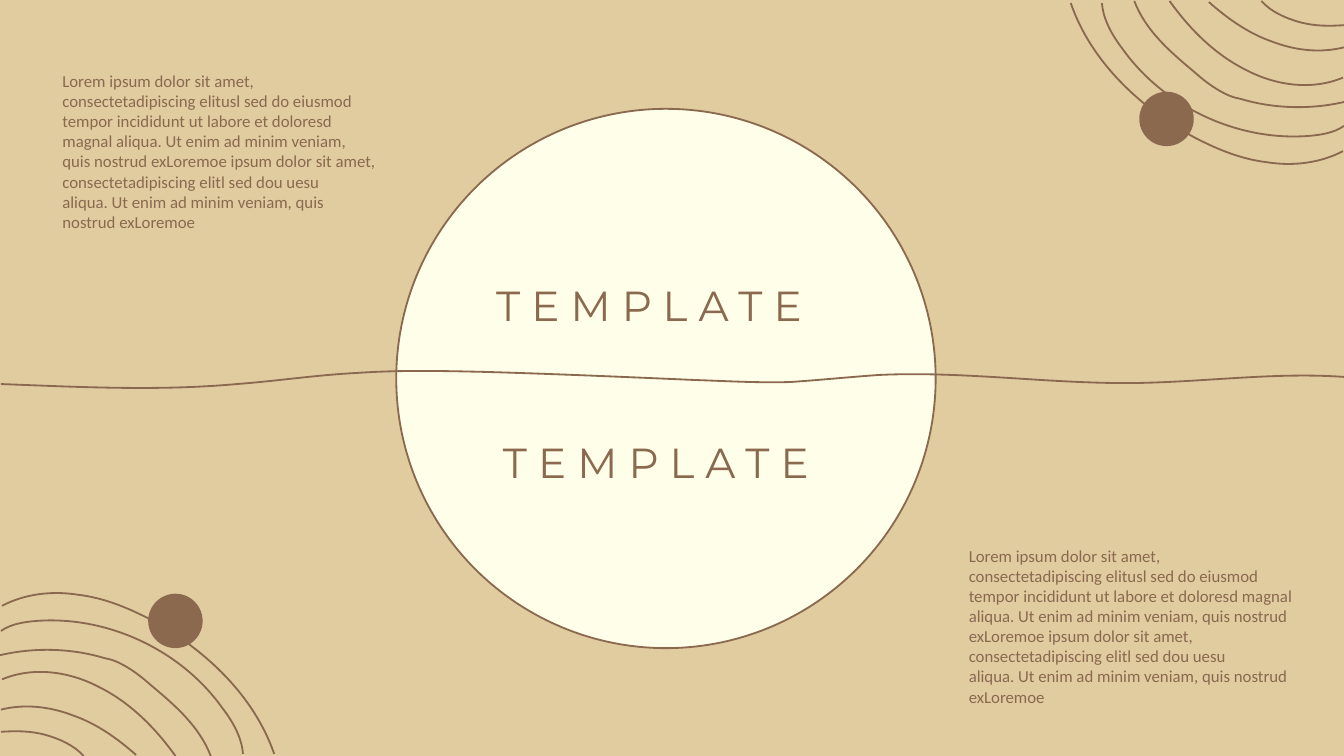
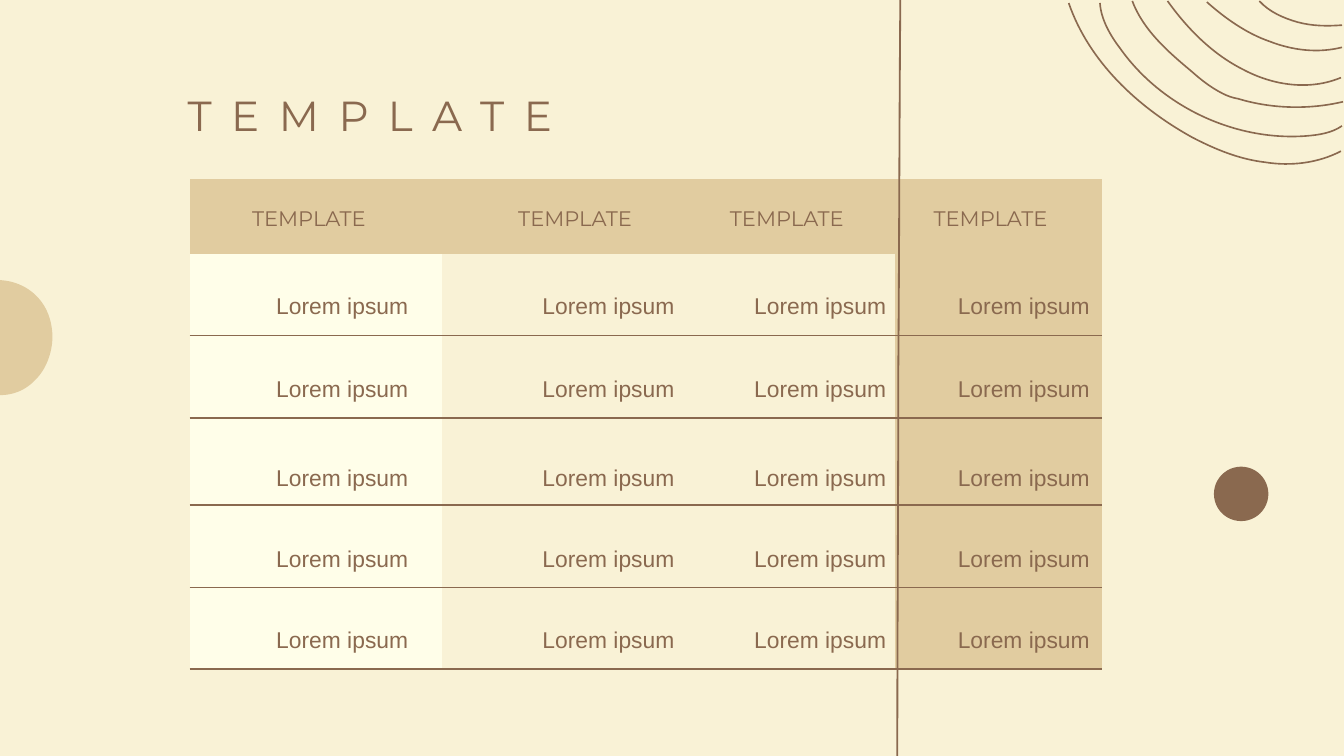
from lxml import etree
from pptx import Presentation
from pptx import util as u
from pptx.dml.color import RGBColor
from pptx.enum import shapes, text
from pptx.oxml import ns

# Shared look
BROWN = RGBColor(0x8A, 0x69, 0x4F)
TAN = RGBColor(0xE1, 0xCC, 0xA0)
CREAM = RGBColor(0xF9, 0xF2, 0xD6)
IVORY = RGBColor(0xFF, 0xFE, 0xE9)
TITLE_FONT, BODY_FONT, TABLE_FONT = "Montserrat", "Calibri", "Arial"
WIDTH, HEIGHT = 13.33, 7.5
LINE = 1.3
DOT = 0.54
NO_STYLE = "{2D5ABB26-0587-4C30-8999-92F81FD0307C}"

# Top-right corner arcs: a start point, then Bezier triples
ARCS = [
    [(10.62, 0.03), (10.82, 0.61), (11.3, 1.06), (11.84, 1.36),
     (12.07, 1.48), (12.31, 1.58), (12.57, 1.61),
     (12.82, 1.65), (13.09, 1.62), (13.32, 1.5)],
    [(10.93, 0.03), (10.94, 0.19), (11.03, 0.35), (11.13, 0.48),
     (11.54, 1.06), (12.27, 1.4), (12.97, 1.35),
     (13.1, 1.34), (13.23, 1.32), (13.33, 1.25)],
    [(11.25, 0.01), (11.36, 0.3), (11.6, 0.51), (11.84, 0.71),
     (11.93, 0.79), (12.03, 0.87), (12.15, 0.93),
     (12.19, 0.95), (12.24, 0.97), (12.3, 0.98),
     (12.63, 1.08), (13, 1.09), (13.34, 1.01)],
    [(11.6, 0.01), (11.8, 0.29), (12.05, 0.54), (12.35, 0.69),
     (12.65, 0.85), (13.01, 0.9), (13.32, 0.77)],
    [(11.99, 0.02), (12.17, 0.18), (12.38, 0.33), (12.61, 0.41),
     (12.84, 0.5), (13.09, 0.53), (13.33, 0.47)],
    [(12.51, 0.01), (12.61, 0.12), (12.75, 0.18), (12.89, 0.22),
     (13.04, 0.26), (13.18, 0.26), (13.33, 0.25)],
]
WAVE = [
    (0.01, 3.81), (0.79, 3.84), (1.58, 3.88), (2.35, 3.81),
    (2.75, 3.78), (3.14, 3.72), (3.54, 3.7),
    (3.96, 3.67), (4.4, 3.68), (4.82, 3.69),
    (5.51, 3.71), (6.2, 3.74), (6.89, 3.77),
    (7.2, 3.78), (7.52, 3.8), (7.84, 3.79),
    (8.14, 3.77), (8.43, 3.74), (8.72, 3.72),
    (9.57, 3.68), (10.41, 3.81), (11.26, 3.8),
    (11.96, 3.79), (12.65, 3.69), (13.34, 3.74),
]
HALF_DISC = [
    (0, 3.92), (0.04, 3.92), (0.2, 3.92), (0.34, 3.78),
    (0.51, 3.62), (0.52, 3.39), (0.52, 3.35),
    (0.52, 3.31), (0.52, 3.13), (0.4, 2.98),
    (0.25, 2.79), (0.03, 2.78), (0, 2.78),
]
VERTICAL = [
    (8.93, 0), (8.92, 1.22), (8.92, 2.45), (8.91, 3.67),
    (8.91, 4.95), (8.9, 6.22), (8.9, 7.5),
]

# Table grid
TABLE_LEFT, TABLE_TOP = 1.88, 1.78
COL_WIDTHS = [2.5, 2.4, 2.1, 2.05]
COL_FILLS = [IVORY, None, None, TAN]
COL_INSETS = [0.62, 0.76, 0.46, 0.38]
ROW_HEIGHTS = [0.74, 0.81, 0.82, 0.86, 0.82, 0.81]
ROW_GAPS = [0, 0.16, 0.16, 0.13, 0.15, 0.16]  # below the text
BODY_INDENT = 0.24

LOREM = [
    "Lorem ipsum dolor sit amet, consectetadipiscing elitusl sed do eiusmod "
    "tempor incididunt ut labore et doloresd magnal aliqua. Ut enim ad minim "
    "veniam, quis nostrud exLoremoe ipsum dolor sit amet, consectetadipiscing "
    "elitl sed dou uesu",
    "aliqua. Ut enim ad minim veniam, quis nostrud exLoremoe",
]


def add_slide(prs, background):
    s = prs.slides.add_slide(prs.slide_layouts[5])
    s.background.fill.solid()
    s.background.fill.fore_color.rgb = background
    return s


def paint(sp, fill=None, line=None):
    sp.shadow.inherit = False
    if fill is None:
        sp.fill.background()
    else:
        sp.fill.solid()
        sp.fill.fore_color.rgb = fill
    if line is None:
        sp.line.fill.background()
    else:
        sp.line.color.rgb = BROWN
        sp.line.width = u.Pt(line)


def bend(sp):
    """Turn each three straight segments into one cubic Bezier segment."""
    segments = list(sp._element.iter(ns.qn("a:lnTo")))
    for i in range(0, len(segments), 3):
        curve = etree.Element(ns.qn("a:cubicBezTo"))
        segments[i].addprevious(curve)
        for segment in segments[i:i + 3]:
            curve.append(segment[0])
            segment.getparent().remove(segment)


def add_curve(s, points, fill=None, line=None):
    start, *rest = [(u.Inches(x), u.Inches(y)) for x, y in points]
    builder = s.shapes.build_freeform(*start)
    builder.add_line_segments(rest, close=fill is not None)
    sp = builder.convert_to_shape()
    bend(sp)
    paint(sp, fill, line)


def add_arcs(s, place, line=LINE):
    for arc in ARCS:
        add_curve(s, [place(x, y) for x, y in arc], line=line)


def add_circle(s, x, y, size, fill=BROWN, line=None):
    sp = s.shapes.add_shape(shapes.MSO_SHAPE.OVAL, u.Inches(x), u.Inches(y),
                            u.Inches(size), u.Inches(size))
    paint(sp, fill, line)


def add_run(p, words, font, size, spacing=0):
    r = p.add_run()
    r.text = words
    r.font.name, r.font.size, r.font.color.rgb = font, u.Pt(size), BROWN
    if spacing:
        r.font._element.set("spc", str(spacing * 100))


def write_heading(sp, spacing):
    tf = sp.text_frame
    tf.word_wrap = False
    tf.auto_size = text.MSO_AUTO_SIZE.NONE
    tf.vertical_anchor = text.MSO_ANCHOR.TOP
    p = tf.paragraphs[0]
    p.alignment = text.PP_ALIGN.LEFT
    add_run(p, "TEMPLATE", TITLE_FONT, 30, spacing)


def set_title(s, x, y, w, spacing):
    sp = s.shapes.title
    sp.left, sp.top, sp.width, sp.height = map(u.Inches, (x, y, w, 0.61))
    s.shapes._spTree.append(sp._element)  # bring to front
    write_heading(sp, spacing)


def add_body(s, x, y, w):
    tf = s.shapes.add_textbox(*map(u.Inches, (x, y, w, 1.72))).text_frame
    tf.word_wrap = True
    for i, words in enumerate(LOREM):
        p = tf.add_paragraph() if i else tf.paragraphs[0]
        add_run(p, words, BODY_FONT, 12)


def add_bottom_border(cell, width):
    border = etree.SubElement(cell._tc.get_or_add_tcPr(), ns.qn("a:lnB"),
                              w=str(u.Pt(width)))
    fill = etree.SubElement(border, ns.qn("a:solidFill"))
    etree.SubElement(fill, ns.qn("a:srgbClr"), val=str(BROWN))


def fill_cell(cell, row, col):
    header = row == 0
    if not header:
        add_bottom_border(cell, LINE)
    fill = TAN if header else COL_FILLS[col]
    if fill is None:
        cell.fill.background()
    else:
        cell.fill.solid()
        cell.fill.fore_color.rgb = fill
    cell.margin_left = u.Inches(COL_INSETS[col] + (0 if header else BODY_INDENT))
    cell.margin_right = 0
    cell.margin_top = u.Inches(0.04 if header else 0)
    cell.margin_bottom = u.Inches(ROW_GAPS[row])
    cell.vertical_anchor = text.MSO_ANCHOR.MIDDLE if header else text.MSO_ANCHOR.BOTTOM
    p = cell.text_frame.paragraphs[0]
    if header:
        add_run(p, "TEMPLATE", TITLE_FONT, 15)
    else:
        add_run(p, "Lorem ipsum", TABLE_FONT, 16.3)


def add_grid(s):
    table = s.shapes.add_table(
        len(ROW_HEIGHTS), len(COL_WIDTHS), u.Inches(TABLE_LEFT), u.Inches(TABLE_TOP),
        u.Inches(sum(COL_WIDTHS)), u.Inches(sum(ROW_HEIGHTS))).table
    table._tbl.tblPr.find(ns.qn("a:tableStyleId")).text = NO_STYLE
    table.horz_banding = False
    for column, width in zip(table.columns, COL_WIDTHS):
        column.width = u.Inches(width)
    for row, height in enumerate(ROW_HEIGHTS):
        table.rows[row].height = u.Inches(height)
        for col in range(len(COL_WIDTHS)):
            fill_cell(table.cell(row, col), row, col)


def build_cover(prs):
    s = add_slide(prs, TAN)
    # Corner arcs, the lower set turned by half a circle
    add_arcs(s, lambda x, y: (13.34 - x, 7.51 - y))
    add_arcs(s, lambda x, y: (x, y))
    add_circle(s, 1.47, 5.89, DOT)
    add_circle(s, 11.3, 0.91, DOT)
    # Central disc and wave
    add_circle(s, 3.93, 1.08, 5.35, IVORY, LINE)
    add_curve(s, WAVE, line=LINE)
    # Headings and text
    set_title(s, 4.82, 2.72, 3.59, 8)
    second = s.shapes.add_textbox(*map(u.Inches, (4.89, 4.28, 3.59, 0.61)))
    write_heading(second, 8)
    add_body(s, 9.51, 5.36, 3.41)
    add_body(s, 0.52, 0.65, 3.31)


def build_table_slide(prs):
    s = add_slide(prs, CREAM)
    add_arcs(s, lambda x, y: (x - 0.02, y), 1.17)
    add_grid(s)
    # Side ornaments
    add_curve(s, HALF_DISC, fill=TAN)
    add_circle(s, 12.04, 4.63, DOT)
    set_title(s, 1.76, 0.84, 4.27, 14)
    add_curve(s, VERTICAL, line=LINE)


def main():
    prs = Presentation()
    prs.slide_width, prs.slide_height = u.Inches(WIDTH), u.Inches(HEIGHT)
    build_cover(prs)
    build_table_slide(prs)
    prs.save("out.pptx")


if __name__ == "__main__":
    main()
